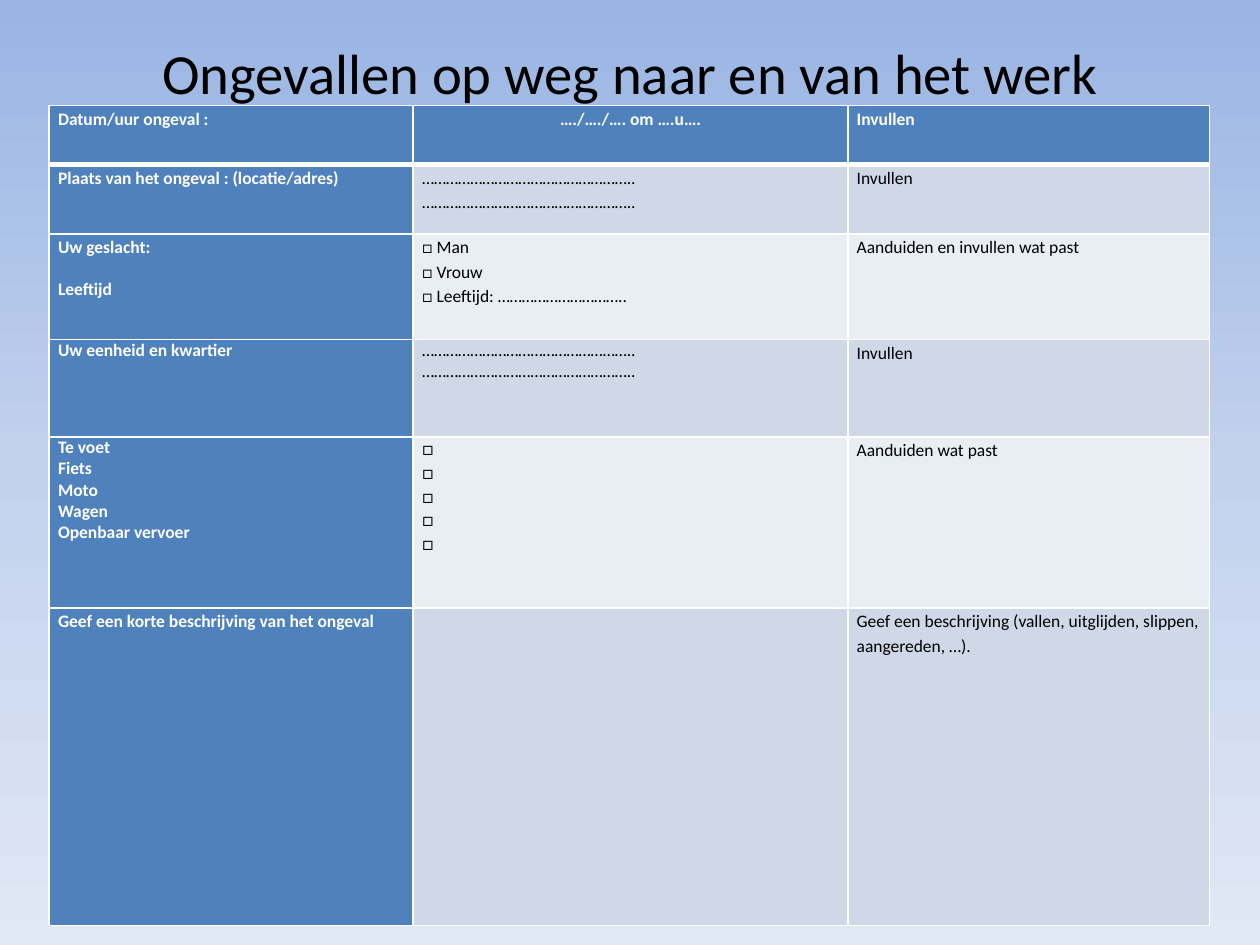
import pptx
import pptx.util
import pptx.enum.text
import pptx.dml.color
import pptx.oxml.ns
from lxml import etree

Cm = pptx.util.Cm
Pt = pptx.util.Pt
qn = pptx.oxml.ns.qn
ALIGN = pptx.enum.text.PP_ALIGN
ANCHOR = pptx.enum.text.MSO_ANCHOR

HUES = {
    "top": "9AB5E4", "mid": "C2D1ED", "low": "E1E8F5",
    "head": "4F81BD", "odd": "D0D8E8", "even": "E9EDF4",
    "ink": "000000", "white": "FFFFFF",
}
FONT = "Calibri"
COLS = [7.34, 8.76, 7.29]
ROWS = [1.19, 1.4, 2.13, 1.96, 3.45, 6.4]
DOTS = "……………………………………………..\n…………………………………………….."
LOOSE, TIGHT, BOX = (10, True), (10, False), (11, False)
CELLS = [
    [(["Datum/uur ongeval :"], LOOSE),
     (["…./…./…. om ….u…."], LOOSE),
     (["Invullen"], LOOSE)],
    [(["Plaats van het ongeval : (locatie/adres)"], LOOSE),
     ([DOTS], LOOSE),
     (["Invullen"], LOOSE)],
    [(["Uw geslacht:", "Leeftijd"], LOOSE),
     (["□ Man\n□ Vrouw\n□ Leeftijd: ………………………….."], LOOSE),
     (["Aanduiden en invullen wat past"], LOOSE)],
    [(["Uw eenheid en kwartier"], TIGHT),
     ([DOTS], TIGHT),
     (["Invullen"], LOOSE)],
    [(["Te voet", "Fiets", "Moto", "Wagen", "Openbaar vervoer"], TIGHT),
     (["□"] * 5, BOX),
     (["Aanduiden wat past"], LOOSE)],
    [(["Geef een korte beschrijving van het ongeval"], LOOSE),
     ([], LOOSE),
     (["Geef een beschrijving (vallen, uitglijden, slippen, aangereden, …)."], LOOSE)],
]


def tint(name):
    return pptx.dml.color.RGBColor.from_string(HUES[name])


def add_run(para, text, size, hue, bold=False):
    run = para.add_run()
    run.text = text
    run.font.name = FONT
    run.font.size = Pt(size)
    run.font.bold = bold
    run.font.color.rgb = tint(hue)


def add_back(slide):
    fill = slide.background.fill
    fill.gradient()
    fill.gradient_angle = 270
    stops = slide.element.find(".//" + qn("a:gsLst"))
    for old in list(stops):
        stops.remove(old)
    for pos, name in ((0, "top"), (50, "mid"), (100, "low")):
        stop = etree.SubElement(stops, qn("a:gs"), pos=str(pos * 1000))
        etree.SubElement(stop, qn("a:srgbClr"), val=HUES[name])


def add_title(slide, text):
    box = slide.shapes.add_textbox(Cm(1.27), Cm(0.76), Cm(22.86), Cm(1.37))
    frame = box.text_frame
    frame.word_wrap = True
    frame.vertical_anchor = ANCHOR.MIDDLE
    para = frame.paragraphs[0]
    para.alignment = ALIGN.CENTER
    add_run(para, text, 32.4, "ink")


def add_edges(cell, row):
    props = cell._tc.get_or_add_tcPr()
    wide = {"T": 3 if row == 1 else 1, "B": 3 if row == 0 else 1}
    for side in "LRTB":
        width = Pt(wide.get(side, 1))
        line = etree.SubElement(props, qn("a:ln" + side), w=str(width))
        fill = etree.SubElement(line, qn("a:solidFill"))
        etree.SubElement(fill, qn("a:srgbClr"), val=HUES["white"])


def fill_text(cell, paras, style, hue, bold, align):
    size, loose = style
    frame = cell.text_frame
    for num, text in enumerate(paras):
        para = frame.add_paragraph() if num else frame.paragraphs[0]
        para.alignment = align
        if loose:
            para.line_spacing = 1.15
            para.space_after = Pt(10)
        for pos, line in enumerate(text.split("\n")):
            if pos:
                para.add_line_break()
            add_run(para, line, size, hue, bold)


def add_grid(slide):
    frame = slide.shapes.add_table(
        len(ROWS), len(COLS), Cm(0.99), Cm(2.13), Cm(sum(COLS)), Cm(sum(ROWS)))
    table = frame.table
    table.first_row = False
    table.horz_banding = False
    for col, width in zip(table.columns, COLS):
        col.width = Cm(width)
    for row, height in zip(table.rows, ROWS):
        row.height = Cm(height)
    for r, row in enumerate(CELLS):
        for c, (paras, style) in enumerate(row):
            cell = table.cell(r, c)
            cell.margin_left = cell.margin_right = Cm(0.18)
            cell.margin_top = cell.margin_bottom = Cm(0)
            add_edges(cell, r)
            head = r == 0 or c == 0
            cell.fill.solid()
            cell.fill.fore_color.rgb = tint(
                "head" if head else "odd" if r % 2 else "even")
            align = ALIGN.CENTER if (r, c) == (0, 1) else ALIGN.LEFT
            fill_text(cell, paras, style, "white" if head else "ink", head, align)


def main():
    deck = pptx.Presentation()
    deck.slide_width = Cm(25.4)
    deck.slide_height = Cm(19.05)
    slide = deck.slides.add_slide(deck.slide_layouts[6])
    add_back(slide)
    add_title(slide, "Ongevallen op weg naar en van het werk")
    add_grid(slide)
    deck.save("out.pptx")


if __name__ == "__main__":
    main()
